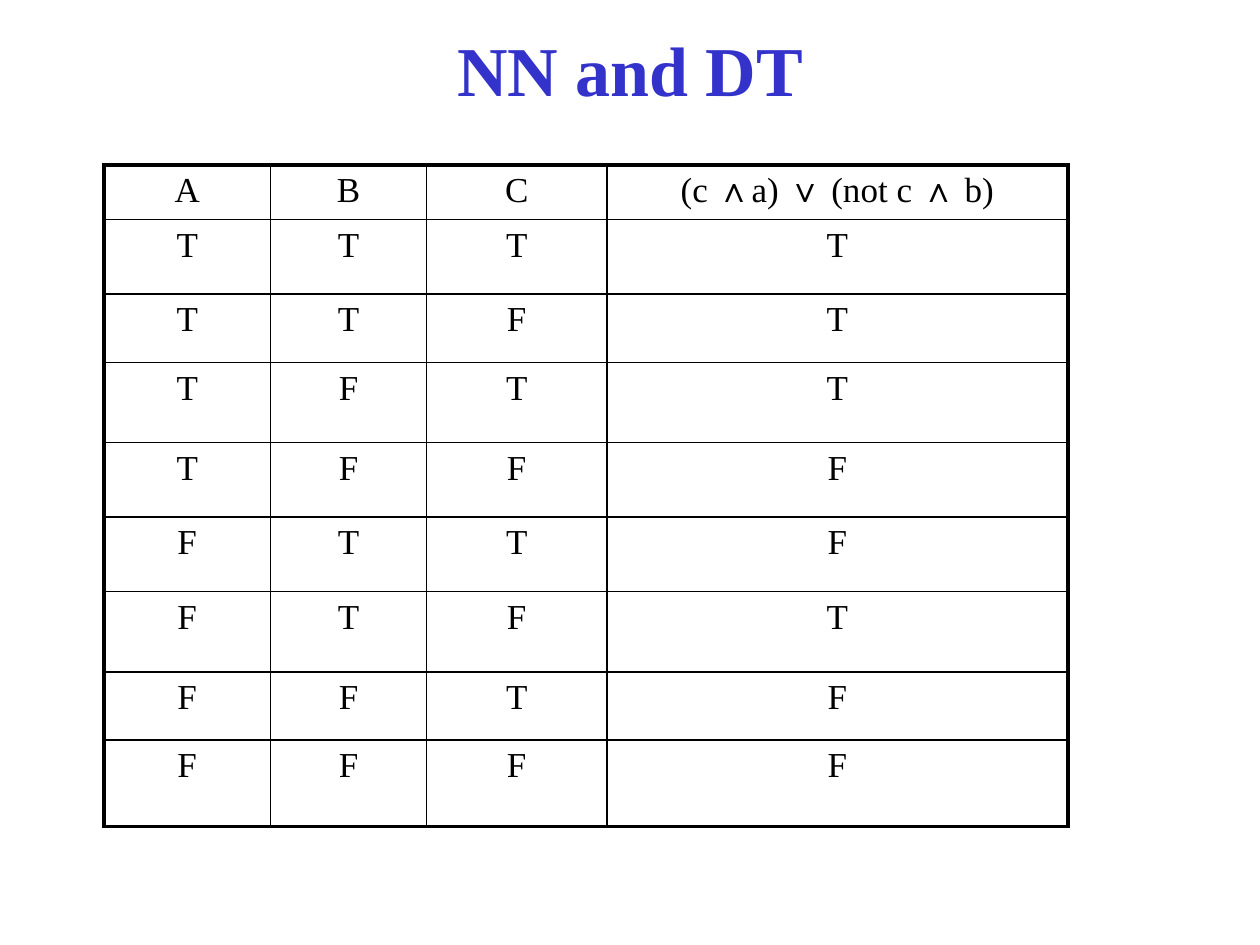
import pptx
import pptx.util
import pptx.dml.color
import pptx.enum.text
import pptx.oxml.ns
import lxml.etree

Pt = pptx.util.Pt
FONT = "Times New Roman"

# Content
TITLE = "NN and DT"
HEAD = ["A", "B", "C", "(c ∧a) ∨ (not c ∧ b)"]
TRUTH = ["TTTT", "TTFT", "TFTT", "TFFF", "FTTF", "FTFT", "FFTF", "FFFF"]
ROWS = [HEAD] + [list(row) for row in TRUTH]

# Layout in points
WIDTHS = [95, 89.3, 103, 263.5]
HEIGHTS = [29.2, 42.5, 39.2, 45.8, 42.5, 42.5, 46, 39, 49.5]
LEFT, TOP = 59.5, 94.3
THICK, THIN = 2.25, 1


def color(code):
    return pptx.dml.color.RGBColor.from_string(code)


def write(frame, text, size, code, bold=False):
    para = frame.paragraphs[0]
    para.alignment = pptx.enum.text.PP_ALIGN.CENTER
    run = para.add_run()
    run.text = text
    style = {"name": FONT, "size": Pt(size), "bold": bold}
    for key, value in style.items():
        setattr(run.font, key, value)
    run.font.color.rgb = color(code)


def border(cell, widths):
    props = cell._tc.get_or_add_tcPr()
    name = pptx.oxml.ns.qn
    # Border lines come before the cell's fill
    for spot, (side, width) in enumerate(widths.items()):
        line = lxml.etree.Element(name("a:ln" + side), w=str(Pt(width)))
        fill = lxml.etree.SubElement(line, name("a:solidFill"))
        lxml.etree.SubElement(fill, name("a:srgbClr"), val="000000")
        props.insert(spot, line)


deck = pptx.Presentation()
deck.slide_width, deck.slide_height = Pt(720), Pt(540)
slide = deck.slides.add_slide(deck.slide_layouts[6])

# Title
box = slide.shapes.add_textbox(Pt(24), Pt(12), Pt(672), Pt(54))
box.text_frame.word_wrap = True
box.text_frame.vertical_anchor = pptx.enum.text.MSO_ANCHOR.MIDDLE
write(box.text_frame, TITLE, 40, "3333CC", True)

# Truth table
table = slide.shapes.add_table(
    len(ROWS), len(HEAD), Pt(LEFT), Pt(TOP), Pt(sum(WIDTHS)), Pt(sum(HEIGHTS))
).table
table.first_row = table.horz_banding = False
for col, width in zip(table.columns, WIDTHS):
    col.width = Pt(width)
for row, height in zip(table.rows, HEIGHTS):
    row.height = Pt(height)

# Cells, with a thick line round the outside
for r, row in enumerate(ROWS):
    for c, text in enumerate(row):
        cell = table.cell(r, c)
        cell.fill.background()
        write(cell.text_frame, text, 20, "000000")
        outer = {
            "L": c == 0,
            "R": c == len(HEAD) - 1,
            "T": r == 0,
            "B": r == len(ROWS) - 1,
        }
        border(cell, {s: THICK if edge else THIN for s, edge in outer.items()})

deck.save("out.pptx")
